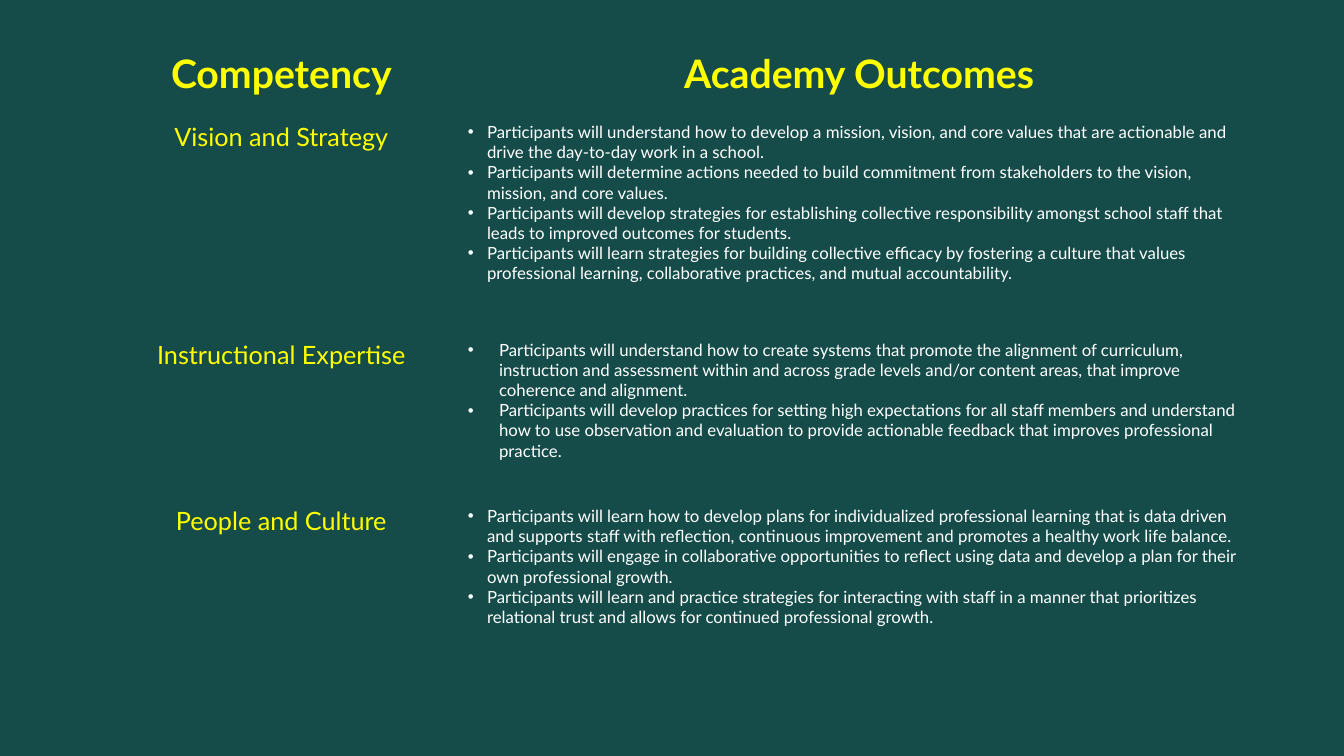
"""Build a slide with a table of academy outcomes by competency."""
import pptx
import pptx.util
import pptx.dml.color
import pptx.enum.shapes
import pptx.enum.text
import pptx.oxml.ns
import lxml.etree

NO_STYLE_NO_GRID = "{2D5ABB26-0587-4C30-8999-92F81FD0307C}"
YELLOW, WHITE = "FFFF00", "FFFFFF"
COLS = [3.5, 7.96]
ROWS = [0.72, 2.16, 1.65, 1.91]
COMPETENCIES = [
    ("Vision and Strategy", 0.19, [
        "Participants will understand how to develop a mission, vision, and core values that are actionable and drive the day-to-day work in a school.",
        "Participants will determine actions needed to build commitment from stakeholders to the vision, mission, and core values.",
        "Participants will develop strategies for establishing collective responsibility amongst school staff that leads to improved outcomes for students.",
        "Participants will learn strategies for building collective efficacy by fostering a culture that values professional learning, collaborative practices, and mutual accountability.",
    ]),
    ("Instructional Expertise", 0.31, [
        "Participants will understand how to create systems that promote the alignment of curriculum, instruction and assessment within and across grade levels and/or content areas, that improve coherence and alignment.",
        "Participants will develop practices for setting high expectations for all staff members and understand how to use observation and evaluation to provide actionable feedback that improves professional practice.",
    ]),
    ("People and Culture", 0.19, [
        "Participants will learn how to develop plans for individualized professional learning that is data driven and supports staff with reflection, continuous improvement and promotes a healthy work life balance.",
        "Participants will engage in collaborative opportunities to reflect using data and develop a plan for their own professional growth.",
        "Participants will learn and practice strategies for interacting with staff in a manner that prioritizes relational trust and allows for continued professional growth.",
    ]),
]


def color(target, hex_code):
    target.rgb = pptx.dml.color.RGBColor.from_string(hex_code)


def write(p, text, size=18, fill=YELLOW, bold=False, indent=None):
    r = p.add_run()
    r.text = text
    r.font.name = "Lato"
    r.font.size = pptx.util.Pt(size)
    r.font.bold = bold
    color(r.font.color, fill)
    if indent is None:
        p.alignment = pptx.enum.text.PP_ALIGN.CENTER
        return
    pPr = p._p.get_or_add_pPr()
    pPr.set("marL", str(pptx.util.Inches(indent)))
    pPr.set("indent", str(-pptx.util.Inches(indent)))
    qn = pptx.oxml.ns.qn
    lxml.etree.SubElement(pPr, qn("a:buFont"), typeface="Arial")
    lxml.etree.SubElement(pPr, qn("a:buChar"), char="•")


prs = pptx.Presentation()
prs.slide_width = pptx.util.Inches(13.33)
prs.slide_height = pptx.util.Inches(7.5)
s = prs.slides.add_slide(prs.slide_layouts[6])
s.background.fill.solid()
color(s.background.fill.fore_color, "0B2827")

panel = s.shapes.add_shape(pptx.enum.shapes.MSO_SHAPE.RECTANGLE,
                           0, 0, prs.slide_width, prs.slide_height)
panel.shadow.inherit = False
panel.fill.solid()
color(panel.fill.fore_color, "154C4A")
panel.line.fill.background()

frame = s.shapes.add_table(len(ROWS), len(COLS),
                           pptx.util.Inches(1.04), pptx.util.Inches(0.44),
                           pptx.util.Inches(sum(COLS)), pptx.util.Inches(sum(ROWS)))
table = frame.table
table.first_row = table.horz_banding = False
for style in frame.element.iter(pptx.oxml.ns.qn("a:tableStyleId")):
    style.text = NO_STYLE_NO_GRID
for col, width in zip(table.columns, COLS):
    col.width = pptx.util.Inches(width)
for row, height in zip(table.rows, ROWS):
    row.height = pptx.util.Inches(height)
for cell in table.iter_cells():
    cell.fill.background()

for c, heading in enumerate(["Competency", "Academy Outcomes"]):
    write(table.cell(0, c).text_frame.paragraphs[0], heading, size=28, bold=True)

for i, (competency, indent, outcomes) in enumerate(COMPETENCIES, start=1):
    write(table.cell(i, 0).text_frame.paragraphs[0], competency)
    tf = table.cell(i, 1).text_frame
    for n, outcome in enumerate(outcomes):
        p = tf.add_paragraph() if n else tf.paragraphs[0]
        write(p, outcome, size=12, fill=WHITE, indent=indent)

prs.save("out.pptx")
